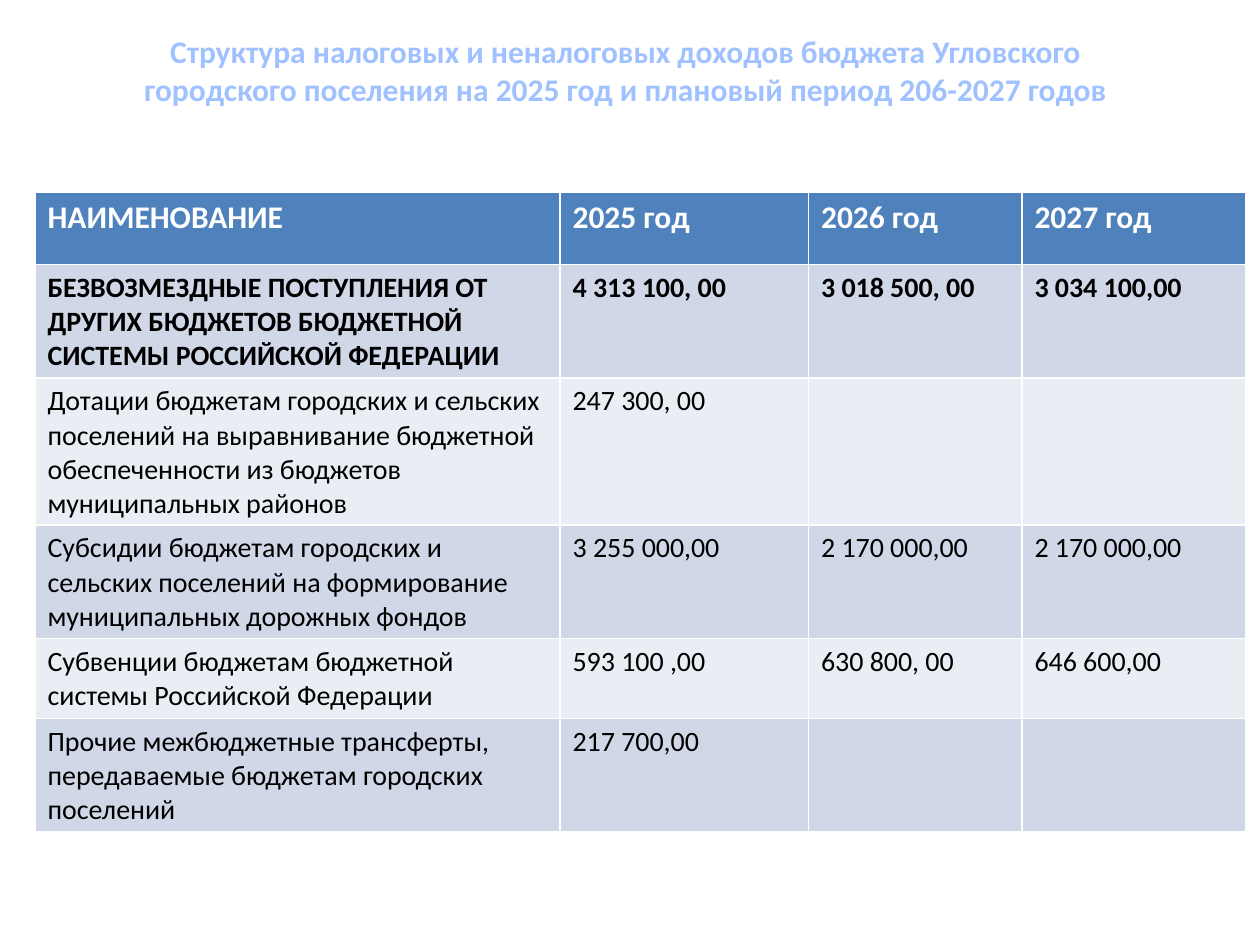
from pptx import Presentation
from pptx.dml.color import RGBColor
from pptx.enum import text
from pptx.util import Pt

COLORS = {
    "title": "A0C1FF",
    "header": "4F81BD",
    "header_text": "FFFFFF",
    "body_text": "000000",
    "odd_row": "D0D8E8",
    "even_row": "E9EDF4",
}
FONT = "Calibri"
TITLE = [
    "Структура налоговых и неналоговых доходов бюджета Угловского",
    "городского поселения на 2025 год и плановый период 206-2027 годов",
]
COLUMN_WIDTHS = [300, 142, 122, 128]
ROW_HEIGHTS = [41, 65, 84, 65, 45.5, 64.5]
ROWS = [
    ["НАИМЕНОВАНИЕ", "2025 год", "2026 год", "2027 год"],
    ["БЕЗВОЗМЕЗДНЫЕ ПОСТУПЛЕНИЯ ОТ ДРУГИХ БЮДЖЕТОВ БЮДЖЕТНОЙ СИСТЕМЫ РОССИЙСКОЙ ФЕДЕРАЦИИ",
     "4 313 100, 00", "3 018 500, 00", "3 034 100,00"],
    ["Дотации бюджетам городских и сельских поселений на выравнивание бюджетной "
     "обеспеченности из бюджетов муниципальных районов", "247 300, 00", "", ""],
    ["Субсидии бюджетам городских и сельских поселений на формирование муниципальных дорожных фондов",
     "3 255 000,00", "2 170 000,00", "2 170 000,00"],
    ["Субвенции бюджетам бюджетной системы Российской Федерации",
     "593 100 ,00", "630 800, 00", "646 600,00"],
    ["Прочие межбюджетные трансферты, передаваемые бюджетам городских поселений",
     "217 700,00", "", ""],
]


def color(name):
    return RGBColor.from_string(COLORS[name])


def style_font(para, size, color_name, bold):
    font = para.font
    font.name, font.size, font.bold = FONT, Pt(size), bold
    font.color.rgb = color(color_name)


def add_title(page, left, top, width, height):
    box = page.shapes.add_textbox(Pt(left), Pt(top), Pt(width), Pt(height))
    frame = box.text_frame
    frame.word_wrap = True
    frame.auto_size = text.MSO_AUTO_SIZE.SHAPE_TO_FIT_TEXT
    frame.text = "\n".join(TITLE)
    for para in frame.paragraphs:
        para.alignment = text.PP_ALIGN.CENTER
        style_font(para, 18, "title", True)


def add_income_table(page, left, top):
    frame = page.shapes.add_table(
        len(ROWS), len(COLUMN_WIDTHS), Pt(left), Pt(top),
        Pt(sum(COLUMN_WIDTHS)), Pt(sum(ROW_HEIGHTS)))
    table = frame.table
    for column, width in zip(table.columns, COLUMN_WIDTHS):
        column.width = Pt(width)
    for index, (row, height, values) in enumerate(zip(table.rows, ROW_HEIGHTS, ROWS)):
        row.height = Pt(height)
        is_header = index == 0
        fill = "header" if is_header else "odd_row" if index % 2 else "even_row"
        for cell, value in zip(row.cells, values):
            cell.fill.solid()
            cell.fill.fore_color.rgb = color(fill)
            cell.text = value
            style_font(cell.text_frame.paragraphs[0], 18 if is_header else 16,
                       "header_text" if is_header else "body_text", index < 2)


def main():
    deck = Presentation()
    deck.slide_width, deck.slide_height = Pt(720), Pt(540)
    page = deck.slides.add_slide(deck.slide_layouts[6])
    add_title(page, 20, 15, 675, 51)
    add_income_table(page, 20, 110)
    deck.save("out.pptx")


if __name__ == "__main__":
    main()
